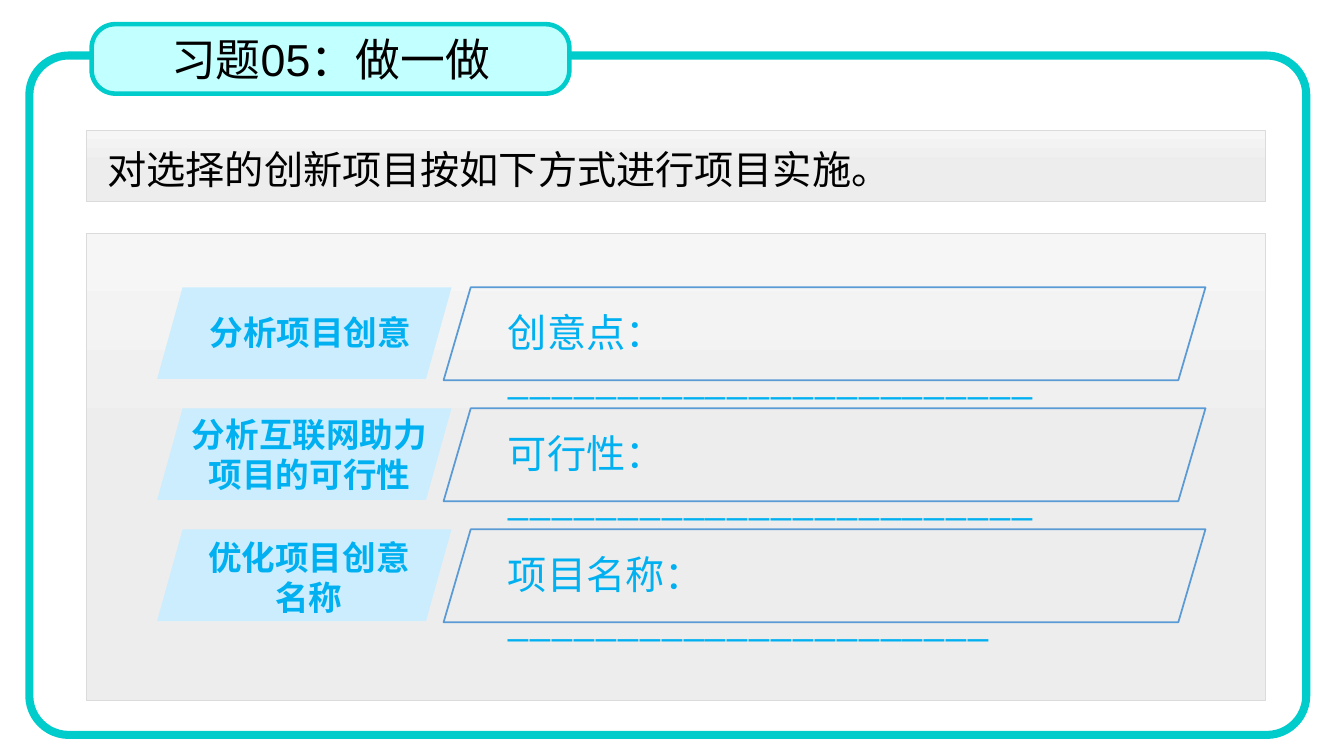
from copy import deepcopy
from dataclasses import dataclass

from lxml import etree
from pptx import Presentation
from pptx.dml.color import RGBColor
from pptx.enum.shapes import MSO_SHAPE
from pptx.enum.text import MSO_ANCHOR, MSO_AUTO_SIZE, PP_ALIGN
from pptx.oxml.ns import qn
from pptx.util import Cm, Pt

RECT, ROUNDED = MSO_SHAPE.RECTANGLE, MSO_SHAPE.ROUNDED_RECTANGLE
SLANTED = MSO_SHAPE.PARALLELOGRAM
LEFT, CENTER = PP_ALIGN.LEFT, PP_ALIGN.CENTER
TOP, MIDDLE = MSO_ANCHOR.TOP, MSO_ANCHOR.MIDDLE
NO_AUTOFIT = MSO_AUTO_SIZE.NONE

BODY_FONT, TITLE_FONT = "Noto Sans CJK SC", "Arial"
BLACK, SKY, TEAL = "000000", "00B0F0", "00CCCC"
PANEL_STOPS = ((0, "F6F6F6"), (0.5, "EDEDED"), (1, "EBEBEB"))
FIRST_ROW, ROW_PITCH = 7.24, 3.05

Box = tuple[float, float, float, float]


@dataclass(frozen=True)
class Step:
    label: str
    label_left: float
    label_drop: float
    label_width: float
    label_height: float
    label_align: PP_ALIGN
    prompt: str
    blanks: int


STEPS = (
    Step("分析项目创意", 5.03, 0.48, 7.06, 1.27, LEFT, "创意点：", 24),
    Step("分析互联网助力项目的可行性", 4.27, 0, 7.06, 2.31, CENTER, "可行性：", 24),
    Step("优化项目创意\n名称", 4.7, 0.05, 6.17, 2.31, CENTER, "项目名称：", 22),
)


def rgb(value: str) -> RGBColor:
    return RGBColor.from_string(value)


def add_outline(slide, kind, box: Box, *, fill="", line="", weight=1.0, adjust=None):
    """Add a preset shape; an empty fill or line colour means none."""
    shape = slide.shapes.add_shape(kind, *map(Cm, box))
    shape.shadow.inherit = False
    if adjust is not None:
        shape.adjustments[0] = adjust
    if fill:
        shape.fill.solid()
        shape.fill.fore_color.rgb = rgb(fill)
    else:
        shape.fill.background()
    if line:
        shape.line.color.rgb = rgb(line)
        shape.line.width = Pt(weight)
    else:
        shape.line.fill.background()
    return shape


def add_panel(slide, box: Box) -> None:
    """Add a grey panel with a three-stop vertical gradient."""
    panel = add_outline(slide, RECT, box, line="DBDBDB", weight=0.5)
    panel.fill.gradient()
    panel.fill.gradient_angle = 270
    stop_list = panel.fill._xPr.find(".//" + qn("a:gsLst"))
    stop_list.append(deepcopy(stop_list[-1]))
    for stop, (position, colour) in zip(panel.fill.gradient_stops, PANEL_STOPS):
        stop.position = position
        stop.color.rgb = rgb(colour)


def write(holder, text: str, *, size=28, font=BODY_FONT, colour=BLACK, bold=False,
          align=LEFT, anchor=TOP, spacing=1.0, inset=(0.25, 0.13)) -> None:
    """Fill a text holder, one paragraph per line of text."""
    frame = holder.text_frame
    frame.text = text
    frame.word_wrap = True
    frame.auto_size = NO_AUTOFIT
    frame.vertical_anchor = anchor
    frame.margin_left = frame.margin_right = Cm(inset[0])
    frame.margin_top = frame.margin_bottom = Cm(inset[1])
    for paragraph in frame.paragraphs:
        paragraph.alignment = align
        paragraph.line_spacing = spacing
        for run in paragraph.runs:
            run.font.size = Pt(size)
            run.font.name = font
            run.font.bold = bold
            run.font.color.rgb = rgb(colour)
            east_asian = etree.Element(qn("a:ea"), typeface=font)
            run.font._element.find(qn("a:latin")).addnext(east_asian)


def add_text(slide, box: Box, text: str, **text_format) -> None:
    write(slide.shapes.add_textbox(*map(Cm, box)), text, **text_format)


def add_step(slide, step: Step, top: float) -> None:
    """Add one row: the slanted tag with its label, and the answer field."""
    add_text(slide, (12.62, top + 0.43, 16.61, 1.6), step.prompt + "_" * step.blanks,
             colour=SKY, inset=(0.18, 0.1))
    add_outline(slide, SLANTED, (11.18, top, 19.2, 2.34),
                line="5B9BD5", weight=1.25, adjust=0.292)
    add_outline(slide, SLANTED, (3.96, top, 7.42, 2.31), fill="CBEDFE", adjust=0.278)
    label_box = (step.label_left, top + step.label_drop,
                 step.label_width, step.label_height)
    add_text(slide, label_box, step.label, size=24, colour=SKY, bold=True,
             align=step.label_align)


def main() -> None:
    deck = Presentation()
    deck.slide_width, deck.slide_height = Cm(33.87), Cm(19.05)
    slide = deck.slides.add_slide(deck.slide_layouts[5])

    # Panels and frame
    add_panel(slide, (2.18, 5.87, 29.72, 11.79))
    add_panel(slide, (2.18, 3.28, 29.72, 1.8))
    add_outline(slide, ROUNDED, (0.74, 1.4, 32.18, 17.12),
                line=TEAL, weight=5.75, adjust=0.058)

    # Title on its badge
    badge = (2.31, 0.61, 12.04, 1.75)
    add_outline(slide, ROUNDED, badge, fill="C2FFFF", line=TEAL, weight=3.25,
                adjust=0.341)
    title = slide.shapes.title
    title.left, title.top, title.width, title.height = map(Cm, badge)
    write(title, "习题05：做一做", size=32, font=TITLE_FONT, align=CENTER, anchor=MIDDLE)
    slide.shapes._spTree.append(title._element)

    # Instruction
    add_text(slide, (2.46, 2.95, 29.44, 2.06),
             "对选择的创新项目按如下方式进行项目实施。", spacing=1.5)

    # Steps
    for index, step in enumerate(STEPS):
        add_step(slide, step, FIRST_ROW + index * ROW_PITCH)

    deck.save("out.pptx")


if __name__ == "__main__":
    main()
